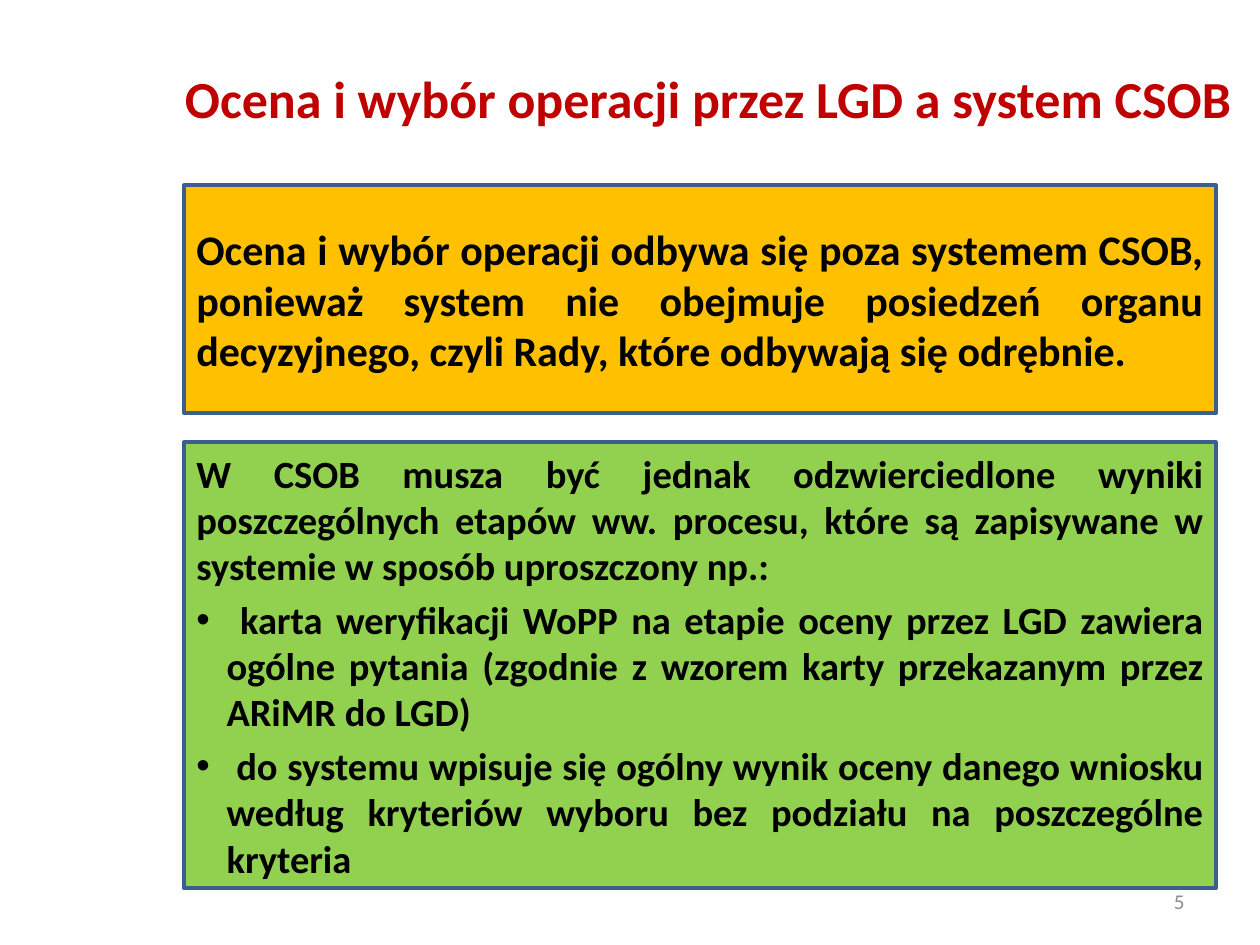
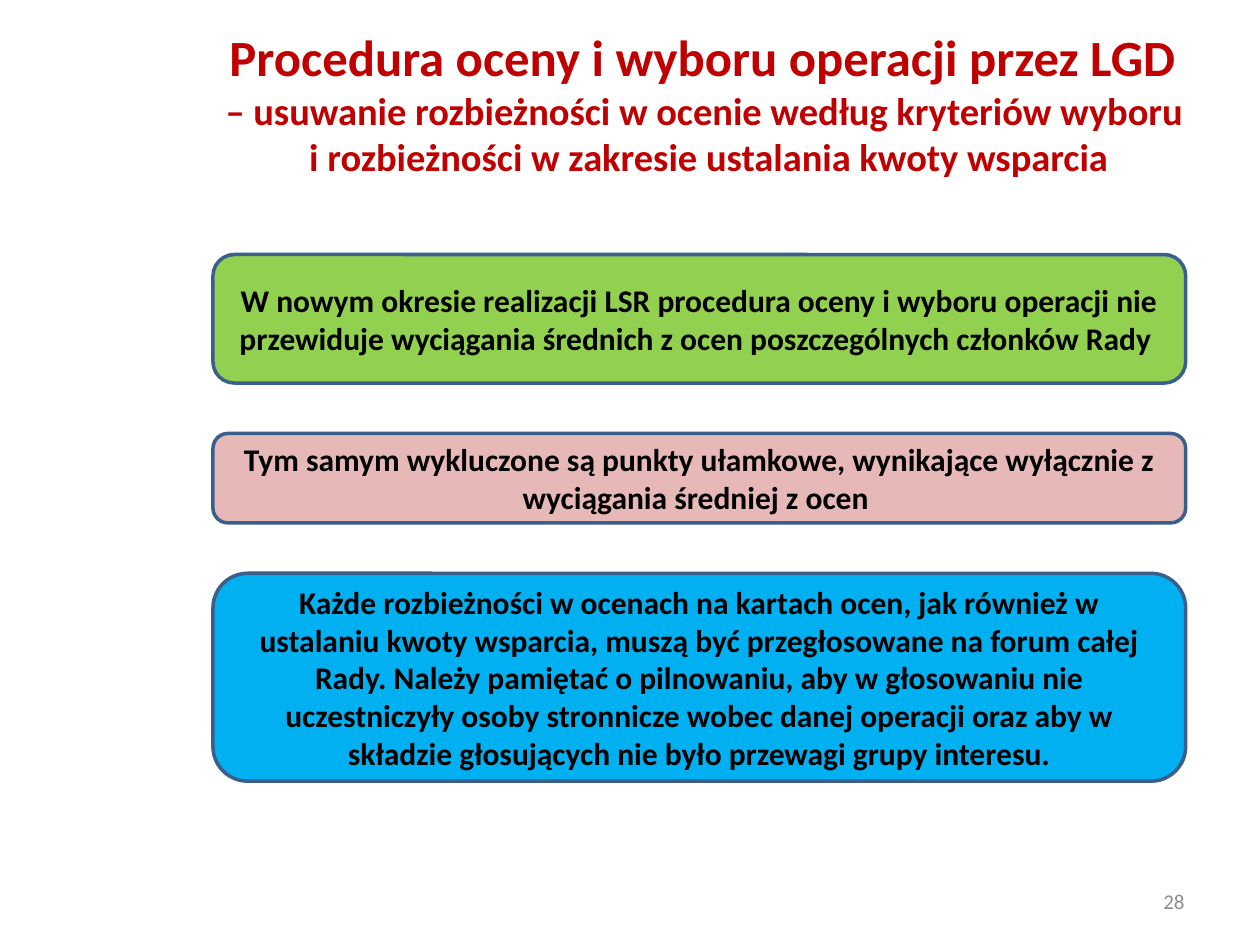
from lxml.etree import SubElement
from pptx import Presentation
from pptx.dml.color import RGBColor
from pptx.enum.shapes import MSO_SHAPE
from pptx.enum.text import MSO_ANCHOR, MSO_AUTO_SIZE, PP_ALIGN
from pptx.oxml.ns import qn
from pptx.util import Inches, Pt

FONT = "Calibri"
RED, GRAY, BLACK, OUTLINE = "C00000", "8C8C8C", "000000", "3A5F8C"
ORANGE, GREEN, PINK, BLUE = "FFC000", "92D050", "E6B9B8", "00B0F0"


def color(value):
    return RGBColor.from_string(value)


def add_bullet(paragraph, indent=0.24):
    properties = paragraph._p.get_or_add_pPr()
    properties.set("marL", str(Inches(indent)))
    properties.set("indent", str(-Inches(indent)))
    SubElement(properties, qn("a:buFont")).set("typeface", "Arial")
    SubElement(properties, qn("a:buChar")).set("char", "•")


def write(frame, text, size=18, fill=BLACK, bold=True, align=PP_ALIGN.CENTER,
          bullet=False, first=True, space_before=0):
    paragraph = frame.paragraphs[0] if first else frame.add_paragraph()
    if bullet:
        add_bullet(paragraph)
    paragraph.alignment = align
    paragraph.space_before = Pt(space_before)
    run = paragraph.add_run()
    run.text = text
    run.font.name = FONT
    run.font.size = Pt(size)
    run.font.bold = bold
    run.font.color.rgb = color(fill)


class Deck:
    def __init__(self):
        self.presentation = Presentation()
        self.presentation.slide_width = Inches(10)
        self.presentation.slide_height = Inches(7.5)
        self.slide = None

    def prepare(self, frame, margin=0.1):
        frame.word_wrap = True
        frame.auto_size = MSO_AUTO_SIZE.NONE
        frame.vertical_anchor = MSO_ANCHOR.MIDDLE
        frame.margin_left = frame.margin_right = Inches(margin)
        return frame

    def add_slide(self, number, title_lines, title_height):
        self.slide = self.presentation.slides.add_slide(self.presentation.slide_layouts[5])
        title = self.slide.shapes.title
        title.left, title.top = Inches(1.33), Inches(0.08)
        title.width, title.height = Inches(8.59), Inches(title_height)
        frame = self.prepare(title.text_frame)
        for index, (text, size) in enumerate(title_lines):
            write(frame, text, size=size, fill=RED, first=index == 0)
        self.add_number(number)

    def add_number(self, number):
        box = self.slide.shapes.add_textbox(Inches(7.17), Inches(6.95), Inches(2.33), Inches(0.4))
        write(self.prepare(box.text_frame), str(number), size=12, fill=GRAY,
              bold=False, align=PP_ALIGN.RIGHT)

    def add_panel(self, kind, left, top, width, height, fill, margin=0.1):
        shape = self.slide.shapes.add_shape(
            kind, Inches(left), Inches(top), Inches(width), Inches(height))
        shape.shadow.inherit = False
        shape.fill.solid()
        shape.fill.fore_color.rgb = color(fill)
        shape.line.color.rgb = color(OUTLINE)
        shape.line.width = Pt(2)
        return self.prepare(shape.text_frame, margin)

    def add_block(self, top, height, fill, size, intro, bullets=()):
        frame = self.add_panel(MSO_SHAPE.RECTANGLE, 1.46, top, 8.19, height, fill)
        write(frame, intro, size=size, align=PP_ALIGN.JUSTIFY)
        for text in bullets:
            write(frame, text, size=size, align=PP_ALIGN.JUSTIFY, bullet=True,
                  first=False, space_before=size * 0.2)

    def add_rounded_stack(self, top, gap, items):
        for height, fill, text in items:
            frame = self.add_panel(MSO_SHAPE.ROUNDED_RECTANGLE, 1.69, top, 7.72, height,
                                   fill, margin=0.14)
            write(frame, text)
            top += height + gap


def main():
    deck = Deck()

    deck.add_slide(5, [("Ocena i wybór operacji przez LGD a system CSOB", 29.7)], 1.39)
    deck.add_block(
        1.47, 1.81, ORANGE, 24,
        "Ocena i wybór operacji odbywa się poza systemem CSOB, ponieważ system nie obejmuje "
        "posiedzeń organu decyzyjnego, czyli Rady, które odbywają się odrębnie.")
    deck.add_block(
        3.51, 3.54, GREEN, 22,
        "W CSOB musza być jednak odzwierciedlone wyniki poszczególnych etapów ww. procesu, "
        "które są zapisywane w systemie w sposób uproszczony np.:",
        [" karta weryfikacji WoPP na etapie oceny przez LGD zawiera ogólne pytania "
         "(zgodnie z wzorem karty przekazanym przez ARiMR do LGD)",
         " do systemu wpisuje się ogólny wynik oceny danego wniosku według kryteriów "
         "wyboru bez podziału na poszczególne kryteria"])

    deck.add_slide(28, [
        ("Procedura oceny i wyboru operacji przez LGD ", 29),
        ("– usuwanie rozbieżności w ocenie według kryteriów wyboru ", 22),
        ("i rozbieżności w zakresie ustalania kwoty wsparcia", 22)], 1.47)
    deck.add_rounded_stack(2.02, 0.4, [
        (1.02, GREEN,
         "W nowym okresie realizacji LSR procedura oceny i wyboru operacji nie "
         "przewiduje wyciągania średnich z ocen poszczególnych członków Rady "),
        (0.71, PINK,
         "Tym samym wykluczone są punkty ułamkowe, wynikające wyłącznie z "
         "wyciągania średniej z ocen "),
        (1.65, BLUE,
         "Każde rozbieżności w ocenach na kartach ocen, jak również w ustalaniu kwoty "
         "wsparcia, muszą być przegłosowane na forum całej Rady. Należy pamiętać o "
         "pilnowaniu, aby w głosowaniu nie uczestniczyły osoby stronnicze wobec danej "
         "operacji oraz aby w składzie głosujących nie było przewagi grupy interesu.")])

    deck.presentation.save("out.pptx")


if __name__ == "__main__":
    main()
